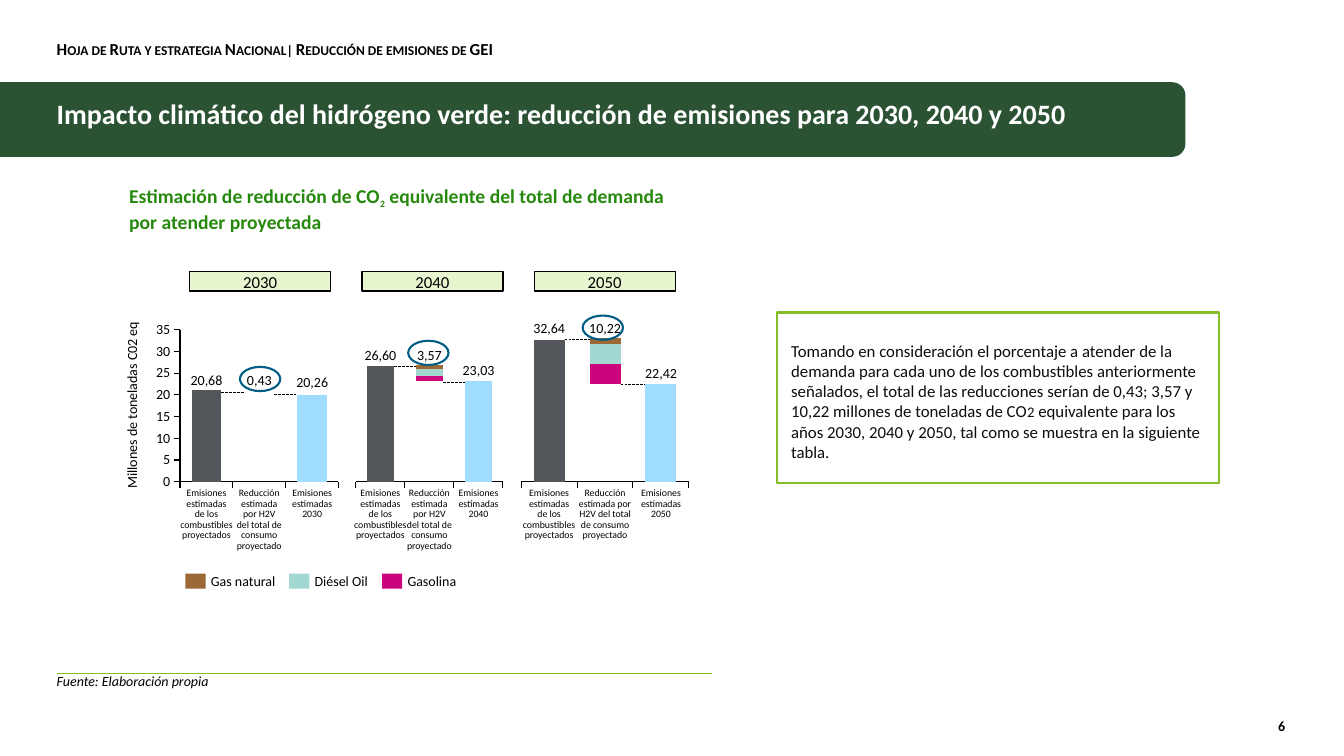
"""Build the slide on emission reductions from green hydrogen in 2030, 2040 and 2050."""
from dataclasses import dataclass, field
from typing import Any, Optional

from lxml.etree import SubElement
from pptx import Presentation
from pptx.chart.data import CategoryChartData
from pptx.dml.color import RGBColor
from pptx.enum.chart import XL_CHART_TYPE, XL_TICK_LABEL_POSITION, XL_TICK_MARK
from pptx.enum.dml import MSO_LINE
from pptx.enum.shapes import MSO_CONNECTOR, MSO_SHAPE
from pptx.enum.text import MSO_ANCHOR, MSO_AUTO_SIZE, PP_ALIGN
from pptx.oxml.ns import qn
from pptx.util import Pt

Box = tuple[float, float, float, float]


@dataclass(frozen=True)
class Theme:
    font: str = "Calibri"
    black: str = "000000"
    white: str = "FFFFFF"
    ink: str = "0D0D0D"
    band: str = "2C5234"
    lime: str = "86BC25"
    green: str = "26890D"
    year: str = "E8F6CF"
    ring: str = "005D84"
    estimate: str = "53565A"
    remainder: str = "A0DCFF"
    gasoline: str = "CB057C"
    diesel: str = "A3D7D2"
    gas: str = "9B6836"
    heading: float = 20
    subtitle: float = 14
    body: float = 12
    subscript: float = 10.5
    small: float = 10
    tiny: float = 7


THEME = Theme()


@dataclass(frozen=True)
class Span:
    text: str
    size: float
    color: str = THEME.black
    font: dict[str, Any] = field(default_factory=dict)
    attributes: dict[str, str] = field(default_factory=dict)


@dataclass(frozen=True)
class YearPanel:
    year: str
    box: Box
    plot: Box
    maximum: float
    totals: tuple[float, float, float]
    reductions: tuple[float, float, float]
    labels: tuple[tuple[str, float], ...]
    link_tops: tuple[float, float]
    ring: tuple[float, float]
    reduction: tuple[str, float] = ("Reducción estimada por H2V\ndel total de consumo proyectado", 33.8)
    show_axis: bool = False

    @property
    def step(self) -> float:
        return self.box[2] * self.plot[2] / 3

    def center(self, index: int) -> float:
        return self.box[0] + self.box[2] * self.plot[0] + self.step * (index + 0.5)


@dataclass(frozen=True)
class LegendEntry:
    name: str
    color: str
    left: float
    width: float


PANELS = (
    YearPanel("2030", (100.3, 223.5, 149, 132.6), (0.19, 0.09, 0.76, 0.82), 35, (21, 20, 20), (0, 0, 0),
              (("20,68", 266.8), ("0,43", 266.8), ("20,26", 268.2)),
              (280.1, 281.5), (171.4, 262.1), show_axis=True),
    YearPanel("2040", (247.1, 229.4, 118.1, 122), (0.06, 0.05, 0.89, 0.89), 132, (100, 87, 87), (5, 6, 3),
              (("26,60", 249.1), ("3,57", 249.1), ("23,03", 259.9)), (261.4, 272.9), (291.6, 243.4)),
    YearPanel("2050", (365.6, 229.4, 133.2, 122), (0.05, 0.05, 0.9, 0.89), 107, (100, 69, 69), (14, 14, 4),
              (("32,64", 229.7), ("10,22", 229.7), ("22,42", 262.1)), (242.6, 274.3), (416.2, 225.4),
              ("Reducción estimada por H2V del total de consumo proyectado", 38.9)),
)
LEGEND = (
    LegendEntry("Gas natural", THEME.gas, 132.5, 48.2),
    LegendEntry("Diésel Oil", THEME.diesel, 206.6, 40.3),
    LegendEntry("Gasolina", THEME.gasoline, 272.9, 36.7),
)
FLAT = {"margin_left": 0, "margin_top": 0, "margin_right": 0, "margin_bottom": 0}
MIDDLE = {**FLAT, "vertical_anchor": MSO_ANCHOR.MIDDLE}
UNWRAPPED = {**FLAT, "vertical_anchor": MSO_ANCHOR.BOTTOM, "word_wrap": False}
CENTERED = {"alignment": PP_ALIGN.CENTER, "line_spacing": 0.9}


def apply(target: Any, values: dict[str, Any]) -> None:
    for name, value in values.items():
        setattr(target, name, value)


def points(box: Box) -> tuple[Pt, ...]:
    return tuple(Pt(round(value, 2)) for value in box)


def write(shape: Any, spans: list[Span], frame: dict[str, Any], layout: dict[str, Any]) -> None:
    apply(shape.text_frame, {"word_wrap": True, "auto_size": MSO_AUTO_SIZE.NONE, **frame})
    paragraph = shape.text_frame.paragraphs[0]
    apply(paragraph, {"alignment": PP_ALIGN.LEFT, "space_before": Pt(0), **layout})
    for span in spans:
        for number, line in enumerate(span.text.split("\n")):
            if number:
                paragraph.add_line_break()
                SubElement(paragraph._p[-1], qn("a:rPr")).set("sz", str(int(span.size * 100)))
            run = paragraph.add_run()
            run.text = line
            apply(run.font, {"name": THEME.font, "size": Pt(span.size), "bold": False, **span.font})
            run.font.color.rgb = RGBColor.from_string(span.color)
            for name, value in span.attributes.items():
                run.font._element.set(name, value)


def fill_placeholder(shape: Any, box: Box, span: Span, frame: dict[str, Any], layout: dict[str, Any]) -> None:
    apply(shape, dict(zip(("left", "top", "width", "height"), points(box))))
    write(shape, [span], frame, layout)


def add_text(slide: Any, box: Box, spans: list[Span], frame: dict[str, Any], layout: dict[str, Any]) -> Any:
    shape = slide.shapes.add_textbox(*points(box))
    write(shape, spans, frame, layout)
    return shape


def add_outline(slide: Any, kind: MSO_SHAPE, box: Box, fill: Optional[str] = None,
                line: Optional[str] = None, weight: float = 1.5) -> Any:
    shape = slide.shapes.add_shape(kind, *points(box))
    shape.shadow.inherit = False
    for part, color in ((shape.fill, fill), (shape.line.fill, line)):
        if color:
            part.solid()
            part.fore_color.rgb = RGBColor.from_string(color)
        else:
            part.background()
    if line:
        shape.line.width = Pt(weight)
    return shape


def add_rule(slide: Any, left: float, right: float, top: float, color: str, weight: float) -> Any:
    rule = slide.shapes.add_connector(MSO_CONNECTOR.STRAIGHT, *points((left, top, right, top)))
    rule.line.color.rgb = RGBColor.from_string(color)
    rule.line.width = Pt(weight)
    SubElement(rule._element.spPr, qn("a:effectLst"))
    rule._element.remove(rule._element.find(qn("p:style")))
    return rule


def add_panel_chart(slide: Any, panel: YearPanel) -> None:
    data = CategoryChartData()
    data.categories = ["Emisiones estimadas", "Reducción estimada", f"Emisiones estimadas {panel.year}"]
    data.add_series("Emisiones", panel.totals)
    for entry, value in zip(reversed(LEGEND), panel.reductions):
        data.add_series(entry.name, (None, value, None))
    chart = slide.shapes.add_chart(XL_CHART_TYPE.COLUMN_STACKED, *points(panel.box), data).chart
    apply(chart, {"has_legend": False, "has_title": False})
    apply(chart.font, {"name": THEME.font, "size": Pt(THEME.small)})
    chart.font.color.rgb = RGBColor.from_string(THEME.black)
    plot = chart.plots[0]
    apply(plot, {"gap_width": 80, "overlap": 100, "vary_by_categories": False})
    series = list(plot.series)
    series[0].format.fill.background()
    fills = [(series[0].points[0], THEME.estimate), (series[0].points[2], THEME.remainder)]
    fills += [(part, entry.color) for part, entry in zip(series[1:], reversed(LEGEND))]
    for target, color in fills:
        target.format.fill.solid()
        target.format.fill.fore_color.rgb = RGBColor.from_string(color)
    if not any(panel.reductions):
        series[-1].format.line.color.rgb = RGBColor.from_string(THEME.gas)
        series[-1].format.line.width = Pt(1.5)
    chart.category_axis.tick_label_position = XL_TICK_LABEL_POSITION.NONE
    apply(chart.value_axis, {"minimum_scale": 0, "maximum_scale": panel.maximum,
                             "has_major_gridlines": False, "visible": panel.show_axis})
    if panel.show_axis:
        chart.value_axis.major_unit = 5
        apply(chart.value_axis.tick_labels,
              {"number_format": '#,##0;"-"#,##0', "number_format_is_linked": False})
    for axis in (chart.category_axis, chart.value_axis):
        axis.major_tick_mark = XL_TICK_MARK.OUTSIDE
        if axis.visible:
            axis.format.line.color.rgb = RGBColor.from_string(THEME.black)
            axis.format.line.width = Pt(0.75)
    area = chart._chartSpace.chart.plotArea
    for old in area.findall(qn("c:layout")):
        area.remove(old)
    layout = SubElement(area, qn("c:layout"))
    area.insert(0, layout)
    manual = SubElement(layout, qn("c:manualLayout"))
    settings = ("inner", "edge", "edge", *panel.plot)
    for name, value in zip(("layoutTarget", "xMode", "yMode", "x", "y", "w", "h"), settings):
        SubElement(manual, qn(f"c:{name}")).set("val", str(value))


def add_panel(slide: Any, panel: YearPanel, index: int) -> None:
    half_bar = panel.step / 1.8 / 2
    for position, top in enumerate(panel.link_tops):
        link = add_rule(slide, panel.center(position) + half_bar,
                        panel.center(position + 1) - half_bar, top, THEME.black, 0.25)
        link.line.dash_style = MSO_LINE.LONG_DASH
    add_panel_chart(slide, panel)
    captions = (("Emisiones estimadas\nde los combustibles proyectados", 38.9), panel.reduction,
                (f"Emisiones estimadas {panel.year}", 30.2))
    for position, ((caption, width), (label, top)) in enumerate(zip(captions, panel.labels)):
        center = panel.center(position)
        add_text(slide, (center - width / 2, 348.8, width, 52), [Span(caption, THEME.tiny)], FLAT, CENTERED)
        add_text(slide, (center - 13, top, 26, 10.8), [Span(label, THEME.small)], UNWRAPPED, CENTERED)
    header = add_outline(slide, MSO_SHAPE.RECTANGLE, (135.4 + 123.1 * index, 194.1, 100.8, 13.7),
                         THEME.year, THEME.black, 1)
    write(header, [Span(panel.year, THEME.body)], MIDDLE, {"alignment": PP_ALIGN.CENTER})
    add_outline(slide, MSO_SHAPE.OVAL, (*panel.ring, 28.8, 17.3), line=THEME.ring)


def main() -> None:
    presentation = Presentation()
    apply(presentation, {"slide_width": Pt(960), "slide_height": Pt(540)})
    slide = presentation.slides.add_slide(presentation.slide_layouts[4])
    title, heading, first_spare, source, second_spare = slide.placeholders
    for spare in (first_spare, second_spare):
        spare.element.getparent().remove(spare.element)
    band = add_outline(slide, MSO_SHAPE.ROUNDED_RECTANGLE, (-83.5, 59.5, 929.5, 51.8), THEME.band, THEME.band)
    rule = add_rule(slide, 40.5, 508.3, 481, THEME.lime, 1)
    for backdrop in (rule, band):
        title.element.addprevious(backdrop.element)
    bold = {"bold": True}
    fill_placeholder(title, (40.5, 26.6, 468, 16.6),
                     Span("Hoja de Ruta y estrategia Nacional| Reducción de emisiones de GEI",
                          THEME.body, font=bold, attributes={"cap": "small"}), MIDDLE, {})
    fill_placeholder(heading, (40.5, 52.6, 878.4, 56.9),
                     Span("Impacto climático del hidrógeno verde: reducción de emisiones para 2030, 2040 y 2050",
                          THEME.heading, THEME.white, bold), MIDDLE, {"space_after": Pt(10)})
    fill_placeholder(source, (40.5, 480.6, 878.4, 24.5),
                     Span("Fuente: Elaboración propia", THEME.small, font={"italic": True}),
                     {**FLAT, "vertical_anchor": MSO_ANCHOR.TOP}, {})
    add_text(slide, (895, 512.6, 23, 12.2), [Span("6", THEME.small, font=bold)], MIDDLE,
             {"alignment": PP_ALIGN.RIGHT})
    add_text(slide, (92.2, 131.3, 395.3, 33.8), [
        Span("Estimación de reducción de CO", THEME.subtitle, THEME.green, bold),
        Span("2", THEME.body, THEME.green, bold, {"baseline": "-25000"}),
        Span(" equivalente del total de demanda por atender proyectada", THEME.subtitle, THEME.green, bold),
    ], FLAT, {})
    axis_title = add_text(slide, (89.3, 229.7, 10.8, 119.5),
                          [Span("Millones de toneladas C02 eq", THEME.small)], UNWRAPPED, CENTERED)
    axis_title.text_frame._txBody.bodyPr.set("vert", "vert270")
    for index, panel in enumerate(PANELS):
        add_panel(slide, panel, index)
    for entry in LEGEND:
        add_outline(slide, MSO_SHAPE.RECTANGLE, (entry.left, 409.7, 14.4, 10.8), entry.color)
        add_text(slide, (entry.left + 18.2, 410.4, entry.width, 10.8), [Span(entry.name, THEME.small)],
                 {**MIDDLE, "word_wrap": False}, {"line_spacing": 0.9})
    add_text(slide, (558, 239.8, 313.2, 79.9), [
        Span("Tomando en consideración el porcentaje a atender de la demanda para cada uno de los "
             "combustibles anteriormente señalados, el total de las reducciones serían de 0,43; 3,57 y "
             "10,22 millones de toneladas de CO", THEME.body, THEME.ink),
        Span("2", THEME.subscript, THEME.ink),
        Span(" equivalente para los años 2030, 2040 y 2050, tal como se muestra en la siguiente tabla.",
             THEME.body, THEME.ink),
    ], {}, {"space_after": Pt(3)})
    add_outline(slide, MSO_SHAPE.RECTANGLE, (555.1, 223.2, 315.4, 121.7), line=THEME.lime)
    presentation.save("out.pptx")


if __name__ == "__main__":
    main()
